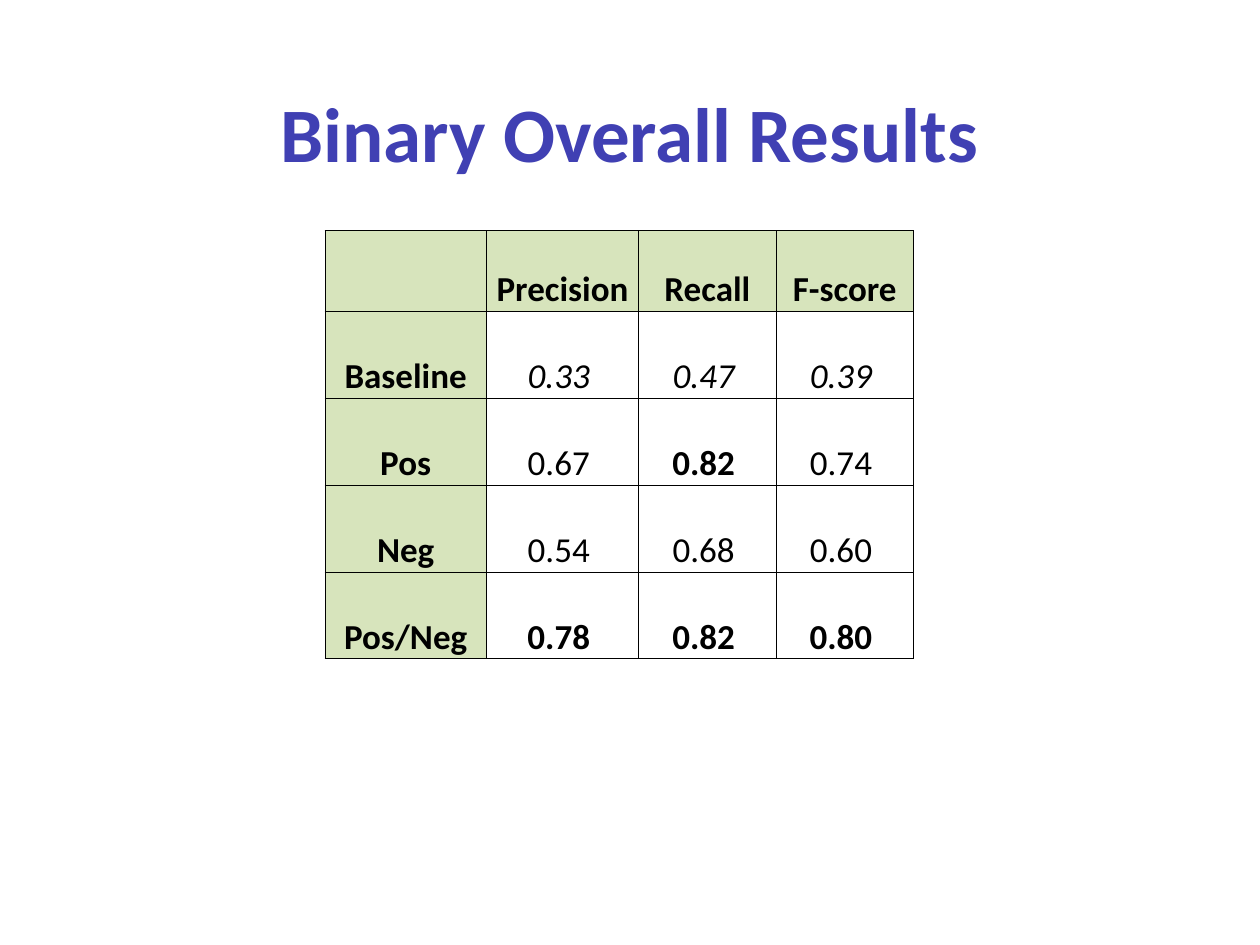
from dataclasses import dataclass

from lxml import etree
from pptx import Presentation, util as u
from pptx.dml.color import RGBColor
from pptx.enum import text
from pptx.oxml.ns import qn

FONT = "Calibri"
INK, TITLE, HEADER = "000000", "4040B3", "D7E4BC"
COLS = (1.28, 1.21, 1.09, 1.09)
ROWS = (0.64,) + (0.69,) * 4


@dataclass
class Entry:
    words: str
    bold: bool = False
    italic: bool = False
    header: bool = False


def head(words: str) -> Entry:
    return Entry(words, bold=True, header=True)


def best(words: str) -> Entry:
    return Entry(words, bold=True)


def base(words: str) -> Entry:
    return Entry(words, italic=True)


RESULTS = (
    (head(""), head("Precision"), head("Recall"), head("F-score")),
    (head("Baseline"), base("0.33"), base("0.47"), base("0.39")),
    (head("Pos"), Entry("0.67"), best("0.82"), Entry("0.74")),
    (head("Neg"), Entry("0.54"), Entry("0.68"), Entry("0.60")),
    (head("Pos/Neg"), best("0.78"), best("0.82"), best("0.80")),
)


def rgb(value: str) -> RGBColor:
    return RGBColor.from_string(value)


def add_text(tf, entry: Entry, size: float, color: str) -> None:
    p = tf.paragraphs[0]
    p.alignment = text.PP_ALIGN.CENTER
    r = p.add_run()
    r.text = entry.words
    r.font.name, r.font.size = FONT, u.Pt(size)
    r.font.bold, r.font.italic = entry.bold, entry.italic
    r.font.color.rgb = rgb(color)


def add_borders(cell, color: str, width: float) -> None:
    props = cell._tc.get_or_add_tcPr()
    for side in ("lnL", "lnR", "lnT", "lnB"):
        line = etree.SubElement(props, qn(f"a:{side}"), w=str(u.Pt(width)))
        fill = etree.SubElement(line, qn("a:solidFill"))
        etree.SubElement(fill, qn("a:srgbClr"), val=color)


def draw_cell(cell, entry: Entry) -> None:
    cell.vertical_anchor = text.MSO_ANCHOR.BOTTOM
    cell.margin_left = cell.margin_top = u.Inches(0.01)
    # Figures sit slightly left of the column centre
    cell.margin_right = u.Inches(0.01 if entry.header else 0.07)
    cell.margin_bottom = 0
    add_borders(cell, INK, 0.5)
    if entry.header:
        cell.fill.solid()
        cell.fill.fore_color.rgb = rgb(HEADER)
    else:
        cell.fill.background()
    if entry.words:
        add_text(cell.text_frame, entry, 20, INK)


def main() -> None:
    prs = Presentation()
    prs.slide_width, prs.slide_height = u.Inches(10), u.Inches(7.5)
    s = prs.slides.add_slide(prs.slide_layouts[6])

    # Title
    sp = s.shapes.add_textbox(*map(u.Inches, (0.75, 0.42, 8.5, 1.25)))
    tf = sp.text_frame
    tf.word_wrap = True
    tf.vertical_anchor = text.MSO_ANCHOR.MIDDLE
    add_text(tf, Entry("Binary Overall Results", bold=True), 44, TITLE)

    # Results table
    area = (2.58, 1.83, sum(COLS), sum(ROWS))
    table = s.shapes.add_table(len(ROWS), len(COLS), *map(u.Inches, area)).table
    table.first_row = table.horz_banding = False
    for column, width in zip(table.columns, COLS):
        column.width = u.Inches(width)
    for row, height, entries in zip(table.rows, ROWS, RESULTS):
        row.height = u.Inches(height)
        for cell, entry in zip(row.cells, entries):
            draw_cell(cell, entry)

    prs.save("out.pptx")


if __name__ == "__main__":
    main()
